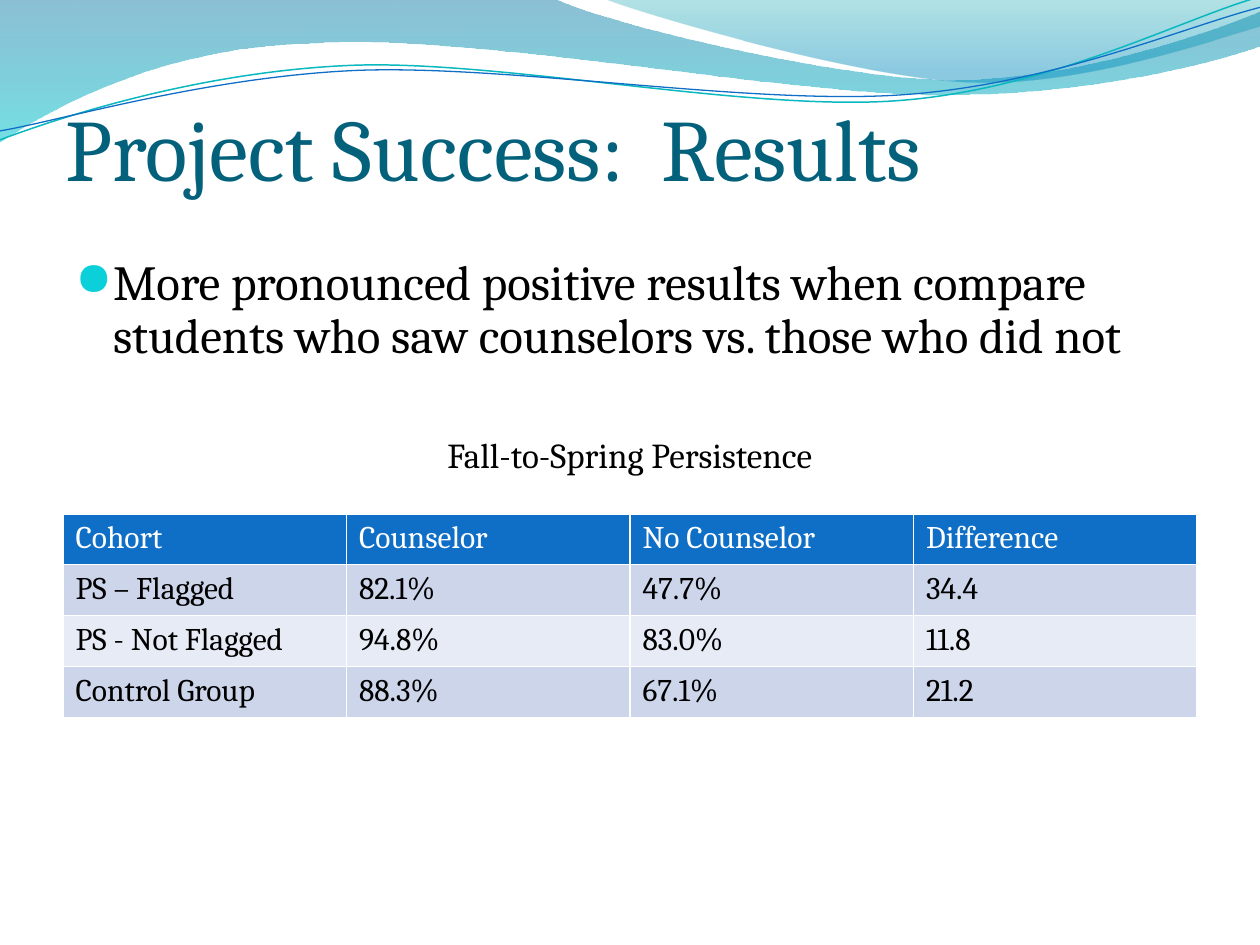
from lxml.etree import SubElement
from pptx import Presentation
from pptx.dml.color import RGBColor
from pptx.enum.text import MSO_ANCHOR, MSO_AUTO_SIZE, PP_ALIGN
from pptx.oxml import parse_xml
from pptx.oxml.ns import nsdecls, qn
from pptx.util import Cm, Pt

WHITE = RGBColor(0xFF, 0xFF, 0xFF)
BLACK = RGBColor(0, 0, 0)
TITLE_TEAL = RGBColor(0x04, 0x61, 0x7B)
BULLET_CYAN = RGBColor(0x0B, 0xD0, 0xD9)
HEADER_BLUE = RGBColor(0x0F, 0x6F, 0xC6)
LINE_TEAL = RGBColor(0x0A, 0xB8, 0xBF)
BAND_DARK = RGBColor(0xCC, 0xD5, 0xEA)
BAND_LIGHT = RGBColor(0xE7, 0xEB, 0xF5)

# Gradient stops: position, colour, opacity in percent
WIDE_WAVE_STOPS = ((0, RGBColor(0x00, 0x74, 0xA1), 45), (1, RGBColor(0x00, 0xC6, 0xCF), 55))
RIGHT_WAVE_STOPS = ((0, RGBColor(0x00, 0xA1, 0xA9), 30), (0.8, RGBColor(0x00, 0x8B, 0xBF), 45))

# Outlines in cm: a start point, then segments of one point (line) or three (Bézier curve)
WIDE_WAVE = ((0, 0), [
    [(11.18, -0.03)],
    [(12.09, 0.43), (16.87, 1.6), (19.25, 1.6)],
    [(21.67, 1.6), (24.33, 0.66), (25.4, 0.23)],
    [(25.43, 0.91)],
    [(24.97, 1.12), (22.1, 1.93), (18.95, 1.91)],
    [(15.8, 1.91), (9.7, 0.71), (6.53, 0.86)],
    [(3.28, 0.91), (1.17, 2.11), (-0.03, 2.87)],
    [(0, 0)],
])
RIGHT_WAVE = ((12.17, -0.03), [
    [(12.93, 0.28), (17.32, 1.57), (19.53, 1.65)],
    [(21.74, 1.75), (24.41, 0.81), (25.4, 0.53)],
    [(25.4, 0)],
    [(12.17, -0.03)],
])
TEAL_LINE = ((0, 2.82), [
    [(1.22, 2.36), (4.01, 1.45), (7.04, 1.32)],
    [(10.03, 1.19), (15.06, 2.26), (18.11, 2.03)],
    [(21.16, 1.8), (23.83, 0.38), (25.35, -0.05)],
])
BLUE_LINE = ((0, 2.64), [
    [(1.19, 2.44), (4.17, 1.55), (7.19, 1.42)],
    [(10.24, 1.3), (15.16, 2.13), (18.21, 1.91)],
    [(21.23, 1.7), (23.9, 0.53), (25.4, 0.15)],
])

RESULTS = [
    ("Cohort", "Counselor", "No Counselor", "Difference"),
    ("PS – Flagged", "82.1%", "47.7%", "34.4"),
    ("PS - Not Flagged", "94.8%", "83.0%", "11.8"),
    ("Control Group", "88.3%", "67.1%", "21.2"),
]


class SlideBuilder:
    font_name = "Cambria"

    def __init__(self, slide):
        self.slide = slide

    def style(self, para, size, color):
        para.font.name = self.font_name
        para.font.size = Pt(size)
        para.font.color.rgb = color

    def outline(self, path_data, close):
        """Build a freeform through all points, then turn each point triple into a curve."""
        start, segments = path_data
        builder = self.slide.shapes.build_freeform(Cm(start[0]), Cm(start[1]))
        points = [(Cm(x), Cm(y)) for segment in segments for x, y in segment]
        builder.add_line_segments(points, close=close)
        shape = builder.convert_to_shape()
        shape.shadow.inherit = False
        lines = iter(list(shape._element.iter(qn("a:lnTo"))))
        for segment in segments:
            first, *others = [next(lines) for _ in segment]
            if others:
                first.tag = qn("a:cubicBezTo")
            for line in others:
                first.append(line[0])
                line.getparent().remove(line)
        return shape

    def wave(self, path_data, stops):
        shape = self.outline(path_data, close=True)
        shape.line.fill.background()
        shape.fill.gradient()
        shape.fill.gradient_angle = 270
        for stop, (position, color, _) in zip(shape.fill.gradient_stops, stops):
            stop.position = position
            stop.color.rgb = color
        colors = list(shape._element.spPr.iter(qn("a:srgbClr")))
        for element, (_, _, opacity) in zip(colors, stops):
            SubElement(element, qn("a:alpha"), val=str(opacity * 1000))

    def curve(self, path_data, color, width):
        shape = self.outline(path_data, close=False)
        shape.fill.background()
        shape.line.color.rgb = color
        shape.line.width = Pt(width)

    def text(self, words, left, top, width, height, size, color=BLACK):
        box = self.slide.shapes.add_textbox(Cm(left), Cm(top), Cm(width), Cm(height))
        box.text_frame.word_wrap = True
        para = box.text_frame.paragraphs[0]
        para.text = words
        self.style(para, size, color)
        return box.text_frame

    def title(self, words, *place):
        frame = self.text(words, *place, size=50, color=TITLE_TEAL)
        frame.vertical_anchor = MSO_ANCHOR.BOTTOM
        frame.margin_left = frame.margin_right = frame.margin_bottom = 0

    def bullet(self, words, *place):
        frame = self.text(words, *place, size=28)
        frame.auto_size = MSO_AUTO_SIZE.SHAPE_TO_FIT_TEXT
        para = frame.paragraphs[0]
        para.line_spacing = 0.9
        para.space_before = Pt(5.6)
        properties = para._p.get_or_add_pPr()
        properties.set("marL", str(Cm(0.76)))
        properties.set("indent", str(Cm(-0.76)))
        font_defaults = properties.find(qn("a:defRPr"))
        for xml in (f'<a:buClr {nsdecls("a")}><a:srgbClr val="{BULLET_CYAN}"/></a:buClr>',
                    f'<a:buSzPct {nsdecls("a")} val="95000"/>',
                    f'<a:buFont {nsdecls("a")} typeface="OpenSymbol"/>',
                    f'<a:buChar {nsdecls("a")} char="●"/>'):
            font_defaults.addprevious(parse_xml(xml))

    def caption(self, words, *place):
        frame = self.text(words, *place, size=20)
        frame.auto_size = MSO_AUTO_SIZE.SHAPE_TO_FIT_TEXT
        frame.paragraphs[0].alignment = PP_ALIGN.CENTER

    def table(self, rows, left, top, width, header_height, row_height):
        """Add a table whose white rules come from the default table style."""
        heights = [header_height] + [row_height] * (len(rows) - 1)
        table = self.slide.shapes.add_table(
            len(rows), len(rows[0]), Cm(left), Cm(top), Cm(width), Cm(sum(heights))).table
        for index, (values, height) in enumerate(zip(rows, heights)):
            table.rows[index].height = Cm(height)
            fill = BAND_DARK if index % 2 else BAND_LIGHT
            if index == 0:
                fill = HEADER_BLUE
            for cell, value in zip(table.rows[index].cells, values):
                cell.text = value
                para = cell.text_frame.paragraphs[0]
                self.style(para, 18, BLACK if index else WHITE)
                para.font.bold = False
                cell.fill.solid()
                cell.fill.fore_color.rgb = fill


def main():
    deck = Presentation()
    deck.slide_width, deck.slide_height = Cm(25.4), Cm(19.05)
    page = SlideBuilder(deck.slides.add_slide(deck.slide_layouts[6]))

    page.wave(WIDE_WAVE, WIDE_WAVE_STOPS)
    page.wave(RIGHT_WAVE, RIGHT_WAVE_STOPS)
    page.curve(TEAL_LINE, LINE_TEAL, 0.85)
    page.curve(BLUE_LINE, HEADER_BLUE, 0.75)

    page.title("Project Success:  Results", 1.32, 0.84, 22.86, 3.18)
    page.table(RESULTS, 1.27, 10.36, 22.86, header_height=0.41, row_height=1.03)
    page.bullet("More pronounced positive results when compare students who saw "
                "counselors vs. those who did not", 1.27, 5.08, 22.86, 3.18)
    page.caption("Fall-to-Spring Persistence", 6.25, 8.61, 12.9, 1.12)
    deck.save("out.pptx")


if __name__ == "__main__":
    main()
